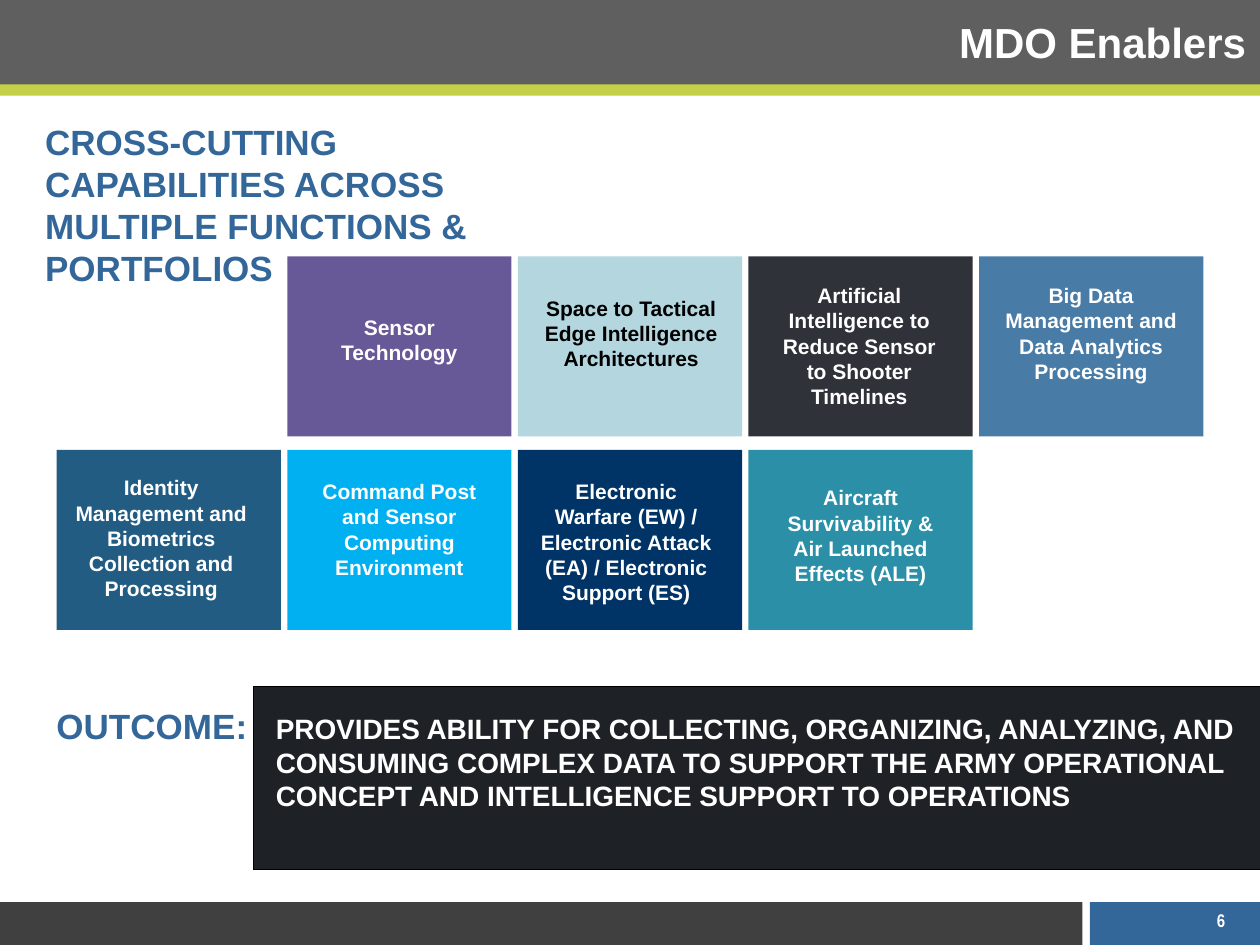
from dataclasses import dataclass

from pptx import Presentation
from pptx import util as u
from pptx.dml.color import RGBColor
from pptx.enum import dml, shapes, text


@dataclass(frozen=True)
class Theme:
    font: str = "Arial"
    narrow: str = "Arial Narrow"
    white: str = "FFFFFF"
    black: str = "000000"
    blue: str = "336699"
    header: str = "5F5F5F"
    lime: str = "C4D146"
    footer: str = "404040"
    panel: str = "1E2126"
    purple: str = "675997"
    pale: str = "B3D6DF"
    slate: str = "2F3239"
    steel: str = "487BA6"
    petrol: str = "225C83"
    sky: str = "00B0F0"
    navy: str = "003366"
    teal: str = "2A8FA7"
    title_size: float = 24
    heading_size: float = 20
    outcome_size: float = 16
    label_size: float = 12
    number_size: float = 10.5


class SlideBuilder:
    COLUMNS, ROWS = 100, 75

    def __init__(self, deck, theme):
        self.deck = deck
        self.theme = theme
        self.page = deck.slides.add_slide(deck.slide_layouts[5])

    def area(self, left, top, width, height):
        column = self.deck.slide_width / self.COLUMNS
        row = self.deck.slide_height / self.ROWS
        return (u.Emu(round(left * column)), u.Emu(round(top * row)),
                u.Emu(round(width * column)), u.Emu(round(height * row)))

    def style(self, para, size, color, align, font=None):
        para.alignment = align
        para.font.name = font or self.theme.font
        para.font.size = u.Pt(size)
        para.font.bold = True
        para.font.color.rgb = RGBColor.from_string(color)

    def title(self, words, *place):
        box = self.page.shapes.title
        box.left, box.top, box.width, box.height = self.area(*place)
        frame = box.text_frame
        frame.text = words
        frame.auto_size = text.MSO_AUTO_SIZE.NONE
        frame.vertical_anchor = text.MSO_ANCHOR.MIDDLE
        para = frame.paragraphs[0]
        para.line_spacing = 0.85
        self.style(para, self.theme.title_size, self.theme.white, text.PP_ALIGN.RIGHT)
        self.page.shapes.element.append(box.element)

    def block(self, color, *place, dotted=False):
        box = self.page.shapes.add_shape(shapes.MSO_SHAPE.RECTANGLE, *self.area(*place))
        box.shadow.inherit = False
        box.fill.solid()
        box.fill.fore_color.rgb = RGBColor.from_string(color)
        if dotted:
            box.line.color.rgb = RGBColor.from_string(self.theme.black)
            box.line.width = u.Pt(0.25)
            box.line.dash_style = dml.MSO_LINE.ROUND_DOT
        else:
            box.line.fill.background()

    def label(self, words, size, color, *place, align=text.PP_ALIGN.LEFT, font=None, wrap=True):
        box = self.page.shapes.add_textbox(*self.area(*place))
        frame = box.text_frame
        frame.word_wrap = wrap
        frame.auto_size = text.MSO_AUTO_SIZE.SHAPE_TO_FIT_TEXT
        frame.text = words
        self.style(frame.paragraphs[0], size, color, align, font)

    def tile(self, column, row, color, ink, words, inset, drop, height):
        left = 4.5 + 18.3 * column
        top = 20.35 + 15.35 * row
        self.block(color, left, top, 17.8, 14.3)
        self.label(words, self.theme.label_size, ink, left + inset, top + drop, 16, height,
                   align=text.PP_ALIGN.CENTER)


def main():
    theme = Theme()
    deck = Presentation()
    deck.slide_width, deck.slide_height = u.Inches(10), u.Inches(7.5)
    slide = SlideBuilder(deck, theme)

    slide.block(theme.footer, 0, 71.6, 85.9, 3.4)
    slide.block(theme.blue, 86.5, 71.6, 13.5, 3.4)
    slide.block(theme.header, 0, 0, 100, 6.8)
    slide.label("6", theme.number_size, theme.white, 95.6, 71.7, 3.5, 2.8,
                font=theme.narrow, wrap=False)
    slide.block(theme.lime, 0, 6.7, 100, 0.9)
    slide.title("MDO Enablers", 0, 0, 99.9, 7.2)
    slide.label("CROSS-CUTTING CAPABILITIES ACROSS MULTIPLE FUNCTIONS & PORTFOLIOS",
                theme.heading_size, theme.blue, 2.6, 9.1, 44.3, 14.5)

    tiles = [
        (1, 0, theme.purple, theme.white, "Sensor Technology", 0.9, 4.1, 5),
        (2, 0, theme.pale, theme.black,
         "Space to Tactical Edge Intelligence Architectures", 1, 2.6, 7.1),
        (3, 0, theme.slate, theme.white,
         "Artificial Intelligence to Reduce Sensor to Shooter Timelines", 0.8, 1.6, 11.1),
        (4, 0, theme.steel, theme.white,
         "Big Data Management and Data Analytics Processing", 0.9, 1.6, 9.1),
        (0, 1, theme.petrol, theme.white,
         "Identity Management and Biometrics Collection and Processing", 0.3, 1.5, 11.1),
        (1, 1, theme.sky, theme.white,
         "Command Post and Sensor Computing Environment", 0.9, 1.8, 9.1),
        (2, 1, theme.navy, theme.white,
         "Electronic Warfare (EW) / Electronic Attack (EA) / Electronic Support (ES)",
         0.6, 1.8, 11.1),
        (3, 1, theme.teal, theme.white,
         "Aircraft Survivability & Air Launched Effects (ALE)", 0.9, 2.3, 9.1),
    ]
    for tile in tiles:
        slide.tile(*tile)

    slide.block(theme.panel, 20.1, 54.5, 79.9, 14.5, dotted=True)
    slide.label("PROVIDES ABILITY FOR COLLECTING, ORGANIZING, ANALYZING, AND CONSUMING "
                "COMPLEX DATA TO SUPPORT THE ARMY OPERATIONAL CONCEPT AND INTELLIGENCE "
                "SUPPORT TO OPERATIONS",
                theme.outcome_size, theme.white, 20.9, 56, 78.1, 14.5)
    slide.label("OUTCOME:", theme.heading_size, theme.blue, 3.5, 55.4, 19.3, 4.4)
    deck.save("out.pptx")


if __name__ == "__main__":
    main()
